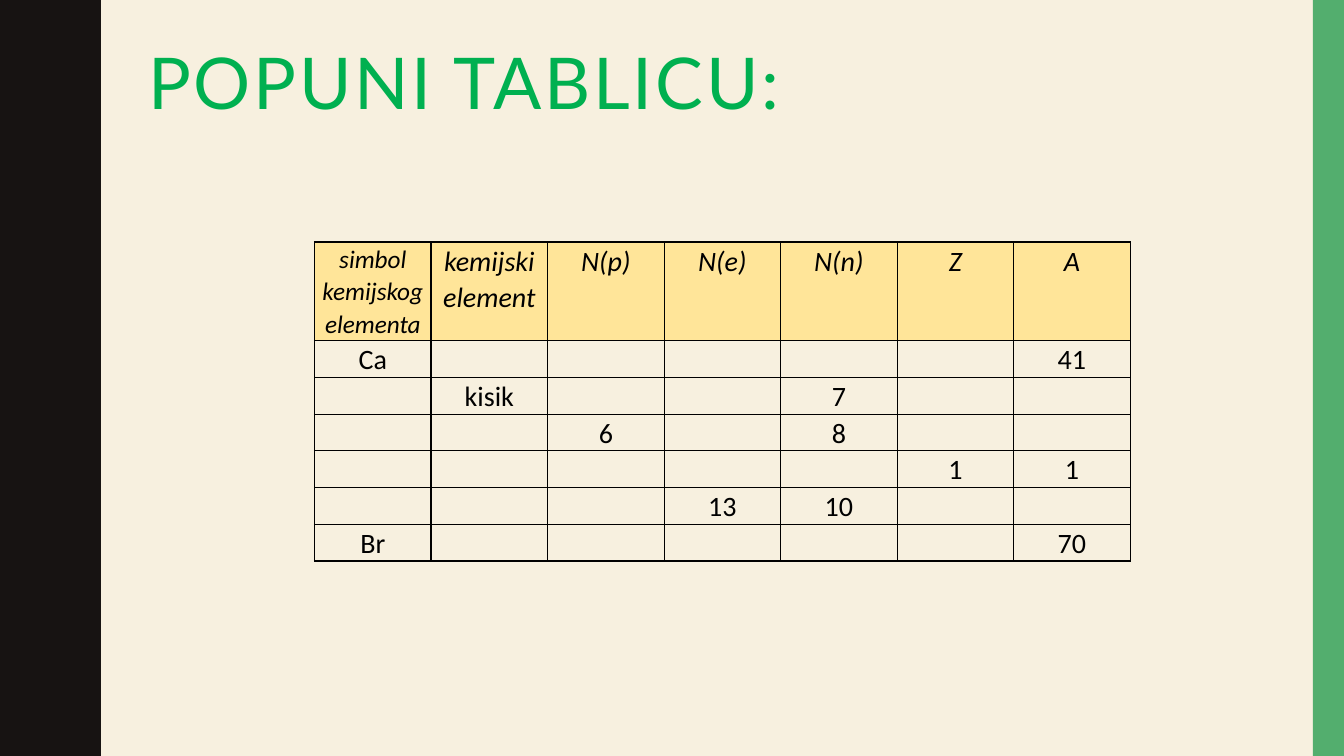
from lxml import etree
from pptx import Presentation, util as u
from pptx.dml.color import RGBColor
from pptx.enum import shapes, text
from pptx.oxml.ns import qn

CREAM = RGBColor(0xF7, 0xF0, 0xDF)
INK = RGBColor(0x17, 0x13, 0x12)
SIDE_GREEN = RGBColor(0x53, 0xAE, 0x6E)
TITLE_GREEN = RGBColor(0x00, 0xB0, 0x50)
HEADER_YELLOW = RGBColor(0xFF, 0xE5, 0x99)
BLACK = RGBColor(0, 0, 0)

SLIDE_W, SLIDE_H = 13.33, 7.5
WAVES = 5
# Half of one wave: (x, y) from trough to crest
HALF_WAVE = [(0.78, 0), (0.78, 0.07), (0.79, 0.14), (0.8, 0.2), (0.81, 0.25),
             (0.83, 0.29), (0.85, 0.33), (0.87, 0.38), (0.89, 0.42),
             (0.91, 0.46), (0.93, 0.5), (0.95, 0.55), (0.96, 0.61),
             (0.97, 0.68), (0.97, 0.75)]

HEADERS = ["simbol kemijskog elementa", "kemijski element",
           "N(p)", "N(e)", "N(n)", "Z", "A"]
ELEMENTS = [
    ["Ca", "", "", "", "", "", "41"],
    ["", "kisik", "", "", "7", "", ""],
    ["", "", "6", "", "8", "", ""],
    ["", "", "", "", "", "1", "1"],
    ["", "", "", "13", "10", "", ""],
    ["Br", "", "", "", "", "", "70"],
]
HEADER_H, ROW_H = 0.98, 0.36


def paint(shape, color):
    shape.fill.solid()
    shape.fill.fore_color.rgb = color
    shape.line.fill.background()
    shape.shadow.inherit = False


def add_wavy_edge(slide, height):
    period = height / WAVES
    wave = HALF_WAVE + [(x, period - y) for x, y in HALF_WAVE[-2::-1]]
    edge = [(x, y + n * period) for n in range(WAVES) for x, y in wave]
    builder = slide.shapes.build_freeform(0, 0, scale=u.Inches(1))
    builder.add_line_segments(edge + [(0, height)], close=True)
    paint(builder.convert_to_shape(), INK)


def add_side_bar(slide, left, top, width, height):
    bar = slide.shapes.add_shape(
        shapes.MSO_SHAPE.RECTANGLE, *map(u.Inches, (left, top, width, height)))
    paint(bar, SIDE_GREEN)


def fill_title(slide, left, top, width, height):
    title = slide.shapes.title
    title.left, title.top, title.width, title.height = map(
        u.Inches, (left, top, width, height))
    frame = title.text_frame
    frame.word_wrap = True
    frame.vertical_anchor = text.MSO_ANCHOR.TOP
    heading = frame.paragraphs[0]
    heading.alignment = text.PP_ALIGN.LEFT
    heading.line_spacing = 0.9
    run = heading.add_run()
    run.text = "POPUNI TABLICU:"
    run.font.name, run.font.size = "Lato", u.Pt(51)
    run.font.color.rgb = TITLE_GREEN
    run.font._element.set("spc", "200")


def add_borders(cell):
    properties = cell._tc.get_or_add_tcPr()
    for side in ("a:lnL", "a:lnR", "a:lnT", "a:lnB"):
        border = etree.SubElement(properties, qn(side), w=str(u.Pt(1)))
        solid = etree.SubElement(border, qn("a:solidFill"))
        etree.SubElement(solid, qn("a:srgbClr"), val=str(BLACK))


def fill_cell(cell, words, size, header):
    add_borders(cell)
    if header:
        cell.fill.solid()
        cell.fill.fore_color.rgb = HEADER_YELLOW
    else:
        cell.fill.background()
    cell.margin_left = cell.margin_right = u.Inches(0.07)
    cell.margin_top = cell.margin_bottom = 0
    entry = cell.text_frame.paragraphs[0]
    entry.alignment = text.PP_ALIGN.CENTER
    entry.line_spacing, entry.space_after = 1.07, u.Pt(8)
    if words:
        run = entry.add_run()
        run.text = words
        run.font.name, run.font.size = "Calibri", u.Pt(size)
        run.font.italic = header
        run.font.color.rgb = BLACK
    else:
        # Blank cells keep the row's text height
        etree.SubElement(entry._p, qn("a:endParaRPr"), sz=str(size * 100))


def add_element_table(slide, left, top, width):
    rows = [HEADERS] + ELEMENTS
    height = HEADER_H + ROW_H * len(ELEMENTS)
    table = slide.shapes.add_table(
        len(rows), len(HEADERS),
        *map(u.Inches, (left, top, width, height))).table
    table.first_row = table.horz_banding = False
    for column in table.columns:
        column.width = u.Inches(width / len(HEADERS))
    for r, row in enumerate(rows):
        table.rows[r].height = u.Inches(ROW_H if r else HEADER_H)
        for c, words in enumerate(row):
            size = 18 if r == c == 0 else 20
            fill_cell(table.cell(r, c), words, size, header=r == 0)


def main():
    deck = Presentation()
    deck.slide_width, deck.slide_height = u.Inches(SLIDE_W), u.Inches(SLIDE_H)
    slide = deck.slides.add_slide(deck.slide_layouts[5])
    slide.background.fill.solid()
    slide.background.fill.fore_color.rgb = CREAM
    add_wavy_edge(slide, SLIDE_H)
    add_side_bar(slide, SLIDE_W - 0.31, 0, 0.31, SLIDE_H)
    fill_title(slide, 1.37, 0.42, 11.13, 1.63)
    add_element_table(slide, 3.12, 2.4, 8.09)
    deck.save("out.pptx")


if __name__ == "__main__":
    main()
